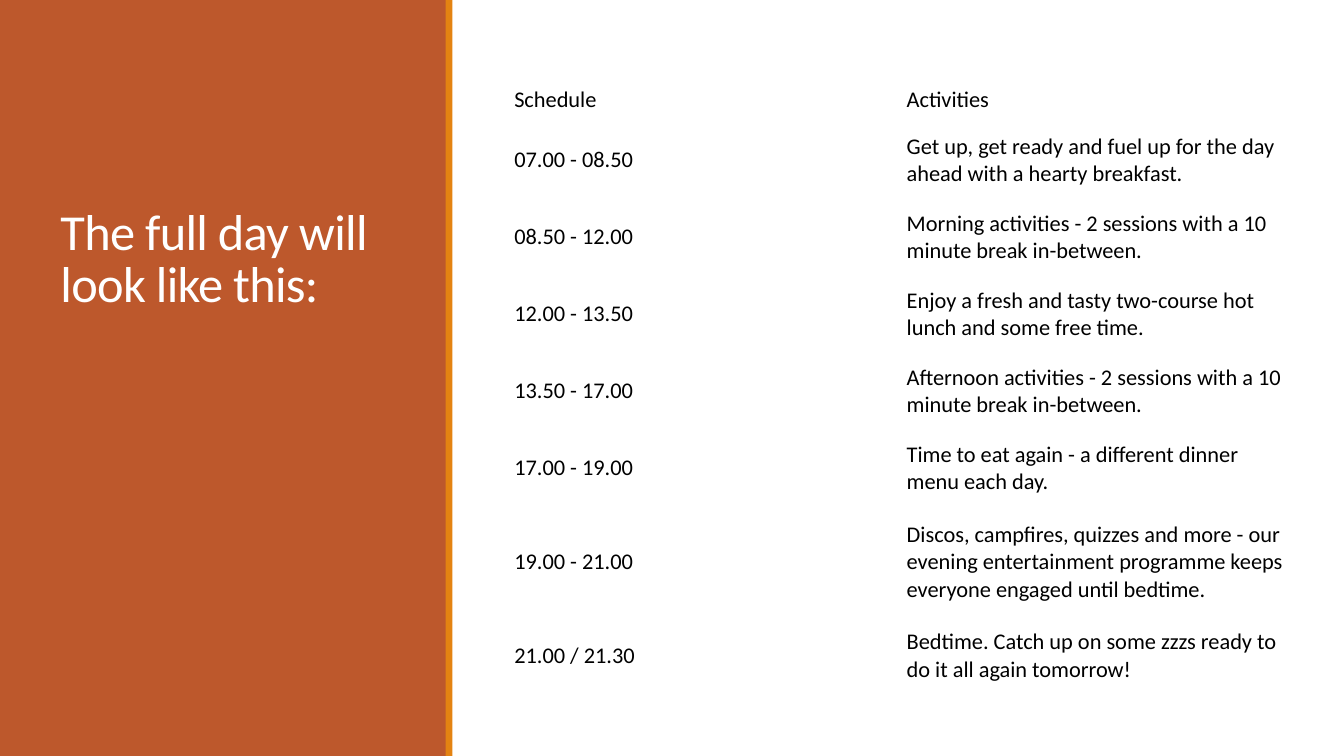
"""Builds the slide that shows the schedule of a full day."""

import dataclasses

import pptx
import pptx.dml.color
import pptx.enum.shapes
import pptx.enum.text
import pptx.shapes.autoshape
import pptx.slide
import pptx.text.text
import pptx.util

Cm = pptx.util.Cm
Pt = pptx.util.Pt
RGBColor = pptx.dml.color.RGBColor


@dataclasses.dataclass(frozen=True)
class Theme:
    font: str = "Calibri"
    panel: RGBColor = RGBColor(0xBD, 0x58, 0x2C)
    accent: RGBColor = RGBColor(0xE4, 0x83, 0x12)
    title_text: RGBColor = RGBColor(0xFF, 0xFF, 0xFF)
    table_text: RGBColor = RGBColor(0, 0, 0)
    title_size: int = 36
    table_size: int = 16


@dataclasses.dataclass(frozen=True)
class Band:
    left: float
    width: float
    color: RGBColor


@dataclasses.dataclass(frozen=True)
class Entry:
    time: str
    activity: str
    height: float = 1.94


THEME = Theme()
SLIDE_WIDTH, SLIDE_HEIGHT = 33.87, 19.05
COLUMN_WIDTH = 9.89

BANDS = [Band(0, 11.25, THEME.panel), Band(11.23, 0.17, THEME.accent)]

ENTRIES = [
    Entry("Schedule", "Activities", 1.11),
    Entry("07.00 - 08.50", "Get up, get ready and fuel up for the day ahead with a hearty breakfast."),
    Entry("08.50 - 12.00", "Morning activities - 2 sessions with a 10 minute break in-between."),
    Entry("12.00 - 13.50", "Enjoy a fresh and tasty two-course hot lunch and some free time."),
    Entry("13.50 - 17.00", "Afternoon activities - 2 sessions with a 10 minute break in-between."),
    Entry("17.00 - 19.00", "Time to eat again - a different dinner menu each day."),
    Entry(
        "19.00 - 21.00",
        "Discos, campfires, quizzes and more - our evening entertainment programme "
        "keeps everyone engaged until bedtime.",
        2.79,
    ),
    Entry("21.00 / 21.30", "Bedtime. Catch up on some zzzs ready to do it all again tomorrow!"),
]


def write(frame: pptx.text.text.TextFrame, wording: str, size: int, color: RGBColor) -> pptx.text.text._Paragraph:
    """Fill a text frame with one left-aligned paragraph."""
    frame.text = wording
    paragraph = frame.paragraphs[0]
    paragraph.alignment = pptx.enum.text.PP_ALIGN.LEFT
    font = paragraph.runs[0].font
    font.name, font.size, font.bold = THEME.font, Pt(size), False
    font.color.rgb = color
    return paragraph


def draw_band(slide: pptx.slide.Slide, band: Band) -> None:
    """Draw a full-height vertical band."""
    strip = slide.shapes.add_shape(
        pptx.enum.shapes.MSO_SHAPE.RECTANGLE, Cm(band.left), 0, Cm(band.width), Cm(SLIDE_HEIGHT)
    )
    strip.shadow.inherit = False
    strip.fill.solid()
    strip.fill.fore_color.rgb = band.color
    strip.line.fill.background()


def draw_title(slide: pptx.slide.Slide, wording: str) -> None:
    """Place the title in front of the bands."""
    title = slide.shapes.title
    title.left, title.top, title.width, title.height = Cm(1.27), Cm(1.65), Cm(8.89), Cm(6.35)
    frame = title.text_frame
    frame.word_wrap = True
    frame.auto_size = pptx.enum.text.MSO_AUTO_SIZE.NONE
    frame.vertical_anchor = pptx.enum.text.MSO_ANCHOR.BOTTOM
    paragraph = write(frame, wording, THEME.title_size, THEME.title_text)
    paragraph.line_spacing = 0.85
    paragraph.runs[0]._r.get_or_add_rPr().set("spc", "-50")
    title.element.getparent().append(title.element)


def draw_schedule(slide: pptx.slide.Slide, entries: list[Entry]) -> None:
    """Draw the table of times and activities."""
    total_height = sum(entry.height for entry in entries)
    schedule = slide.shapes.add_table(
        len(entries), 2, Cm(12.8), Cm(1.96), Cm(2 * COLUMN_WIDTH), Cm(total_height)
    ).table
    schedule.first_row = schedule.horz_banding = False
    for row, entry in zip(schedule.rows, entries):
        row.height = Cm(entry.height)
        for cell, wording in zip(row.cells, (entry.time, entry.activity)):
            cell.fill.background()
            cell.vertical_anchor = pptx.enum.text.MSO_ANCHOR.MIDDLE
            cell.margin_left = cell.margin_right = Cm(0.16)
            cell.margin_top = cell.margin_bottom = Cm(0.08)
            write(cell.text_frame, wording, THEME.table_size, THEME.table_text)


def main() -> None:
    """Build and save the presentation."""
    deck = pptx.Presentation()
    deck.slide_width, deck.slide_height = Cm(SLIDE_WIDTH), Cm(SLIDE_HEIGHT)
    slide = deck.slides.add_slide(deck.slide_layouts.get_by_name("Title Only"))
    for band in BANDS:
        draw_band(slide, band)
    draw_title(slide, "The full day will look like this:")
    draw_schedule(slide, ENTRIES)
    deck.save("out.pptx")


if __name__ == "__main__":
    main()
